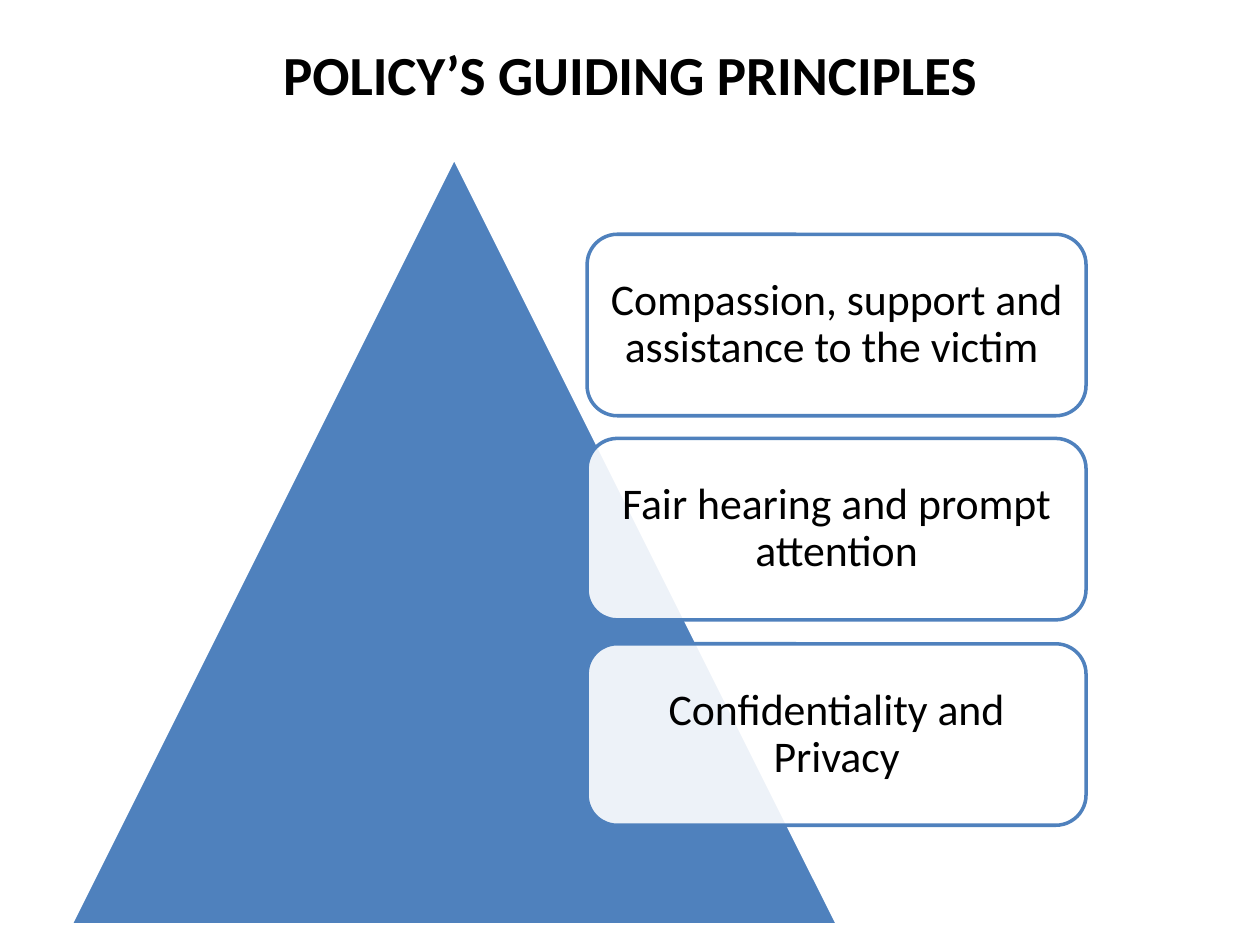
from dataclasses import dataclass

import pptx
import pptx.dml.color
import pptx.enum.shapes
import pptx.enum.text
import pptx.oxml.ns
import pptx.util
from lxml import etree

PX = 9144
SHAPE = pptx.enum.shapes.MSO_SHAPE
RGB = pptx.dml.color.RGBColor


@dataclass(frozen=True)
class Theme:
    font: str = "Calibri"
    text: RGB = RGB(0x00, 0x00, 0x00)
    blue: RGB = RGB(0x4F, 0x81, 0xBD)
    white: RGB = RGB(0xFF, 0xFF, 0xFF)
    title_size: float = 31.5
    body_size: float = 25
    line_width: float = 2
    card_opacity: int = 90


@dataclass(frozen=True)
class Box:
    left: int
    top: int
    width: int
    height: int

    def emu(self) -> tuple[int, ...]:
        return tuple(v * PX for v in (self.left, self.top, self.width, self.height))


@dataclass(frozen=True)
class Principle:
    text: str
    box: Box


THEME = Theme()
TITLE = Box(50, 30, 900, 56)
PYRAMID = Box(56, 125, 609, 609)
CARD = Box(466, 186, 396, 144)
LAST_CARD_TOP = 511
CARD_INSET = 10
TEXTS = [
    "Compassion, support and assistance to the victim ",
    "Fair hearing and prompt attention",
    "Confidentiality and Privacy",
]
PRINCIPLES = [
    Principle(text, Box(
        CARD.left,
        CARD.top + (LAST_CARD_TOP - CARD.top) * i // (len(TEXTS) - 1),
        CARD.width,
        CARD.height,
    ))
    for i, text in enumerate(TEXTS)
]


def write(tf, text: str, size: float, bold: bool = False):
    tf.word_wrap = True
    tf.vertical_anchor = pptx.enum.text.MSO_ANCHOR.MIDDLE
    p = tf.paragraphs[0]
    p.alignment = pptx.enum.text.PP_ALIGN.CENTER
    r = p.add_run()
    r.text = text
    r.font.name = THEME.font
    r.font.size = pptx.util.Pt(size)
    r.font.bold = bold
    r.font.color.rgb = THEME.text
    return p


def draw_shape(shapes, kind: SHAPE, box: Box, fill: RGB, line: RGB):
    sp = shapes.add_shape(kind, *box.emu())
    sp.shadow.inherit = False
    sp.fill.solid()
    sp.fill.fore_color.rgb = fill
    sp.line.color.rgb = line
    sp.line.width = pptx.util.Pt(THEME.line_width)
    return sp


def set_opacity(sp, percent: int) -> None:
    qn = pptx.oxml.ns.qn
    color = sp.fill._xPr.find(qn("a:solidFill")).find(qn("a:srgbClr"))
    etree.SubElement(color, qn("a:alpha")).set("val", str(percent * 1000))


def draw_principle(shapes, item: Principle) -> None:
    sp = draw_shape(shapes, SHAPE.ROUNDED_RECTANGLE, item.box, THEME.white, THEME.blue)
    set_opacity(sp, THEME.card_opacity)
    tf = sp.text_frame
    tf.margin_left = tf.margin_right = CARD_INSET * PX
    tf.margin_top = tf.margin_bottom = CARD_INSET * PX
    write(tf, item.text, THEME.body_size).line_spacing = 0.9


def main() -> None:
    prs = pptx.Presentation()
    prs.slide_width, prs.slide_height = 1000 * PX, 750 * PX
    s = prs.slides.add_slide(prs.slide_layouts[5])
    title = s.shapes.title
    title.left, title.top, title.width, title.height = TITLE.emu()
    write(title.text_frame, "POLICY’S GUIDING PRINCIPLES", THEME.title_size, bold=True)
    diagram = s.shapes.add_group_shape()
    draw_shape(diagram.shapes, SHAPE.ISOSCELES_TRIANGLE, PYRAMID, THEME.blue, THEME.white)
    for item in PRINCIPLES:
        draw_principle(diagram.shapes, item)
    prs.save("out.pptx")


if __name__ == "__main__":
    main()
